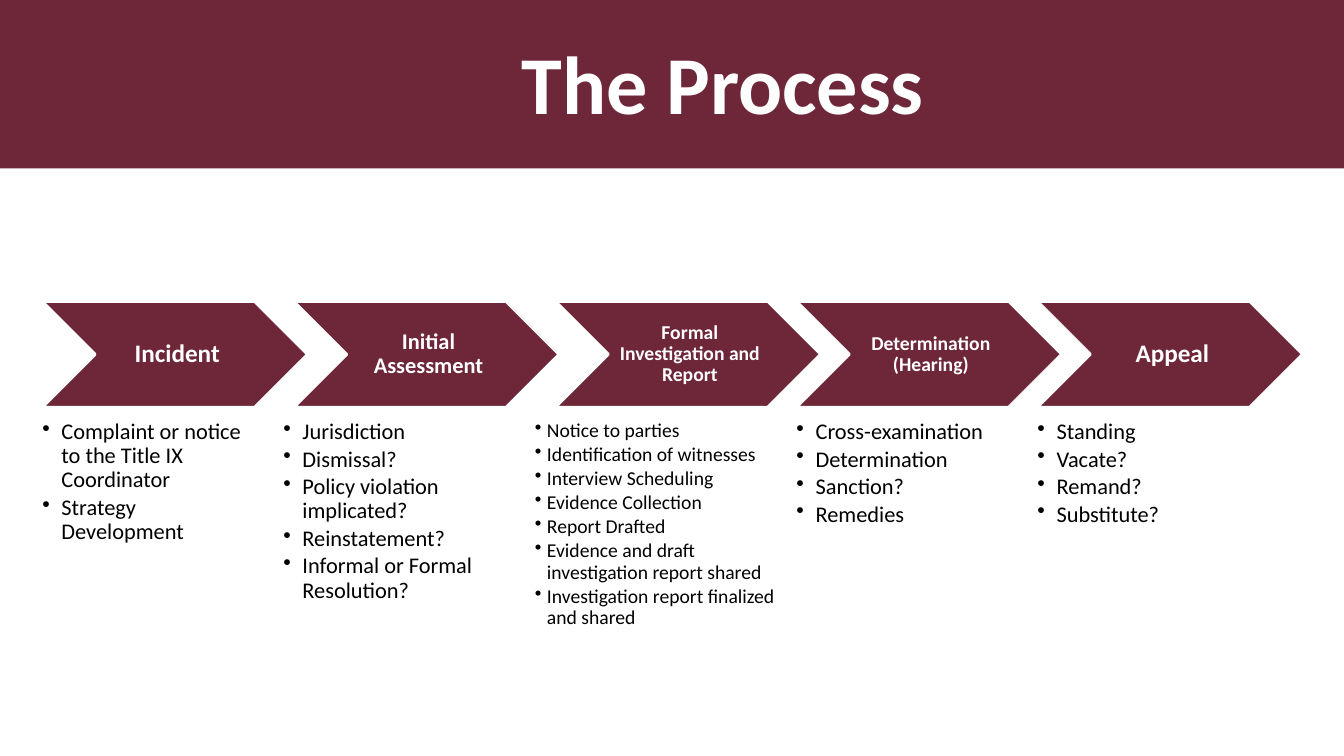
from lxml import etree
from pptx import Presentation
from pptx.dml.color import RGBColor
from pptx.enum.shapes import MSO_SHAPE as Shape
from pptx.enum.text import MSO_ANCHOR as Anchor, PP_ALIGN as Align
from pptx.oxml.ns import qn
from pptx.util import Inches, Pt

COLORS = {"maroon": "6E2639", "white": "FFFFFF", "black": "000000"}
FONT = "Calibri"
BASE_WIDTH = 2.1      # width of a regular column
BASE_STEP = 2.39      # distance between regular columns
CHEVRON_WIDTH, CHEVRON_HEIGHT = 2.63, 1.05
LIST_OFFSET, LIST_HEIGHT = 1.18, 2.14

# heading, heading size, column width, list size, list indent, items
STAGES = [
    ("Incident", 18, 2.1, 16, 0.19,
     ["Complaint or notice to the Title IX Coordinator",
      "Strategy Development"]),
    ("Initial Assessment", 16, 2.31, 16, 0.19,
     ["Jurisdiction", "Dismissal?", "Policy violation implicated?",
      "Reinstatement?", "Informal or Formal Resolution?"]),
    ("Formal Investigation and Report", 14, 2.51, 14, 0.12,
     ["Notice to parties", "Identification of witnesses",
      "Interview Scheduling", "Evidence Collection", "Report Drafted",
      "Evidence and draft investigation report shared",
      "Investigation report finalized and shared"]),
    ("Determination (Hearing)", 14, 2.1, 16, 0.19,
     ["Cross-examination", "Determination", "Sanction?", "Remedies"]),
    ("Appeal", 18, 2.1, 16, 0.19,
     ["Standing", "Vacate?", "Remand?", "Substitute?"]),
]


def rgb(name):
    return RGBColor.from_string(COLORS[name])


def add_maroon_shape(slide, kind, left, top, width, height):
    shape = slide.shapes.add_shape(
        kind, Inches(left), Inches(top), Inches(width), Inches(height))
    shape.shadow.inherit = False
    shape.fill.solid()
    shape.fill.fore_color.rgb = rgb("maroon")
    shape.line.fill.background()
    return shape


def add_text(slide, left, top, width, height, lines, size, color,
             bold=False, align=Align.LEFT, anchor=Anchor.TOP,
             insets=(0, 0, 0, 0)):
    box = slide.shapes.add_textbox(
        Inches(left), Inches(top), Inches(width), Inches(height))
    frame = box.text_frame
    frame.word_wrap = True
    frame.vertical_anchor = anchor
    (frame.margin_left, frame.margin_top,
     frame.margin_right, frame.margin_bottom) = map(Inches, insets)
    frame.text = "\n".join(lines)
    for paragraph in frame.paragraphs:
        paragraph.alignment = align
        paragraph.line_spacing = 0.9
        for run in paragraph.runs:
            run.font.name = FONT
            run.font.size = Pt(size)
            run.font.bold = bold
            run.font.color.rgb = rgb(color)
    return frame


def add_header(slide, left, top, width, height):
    add_maroon_shape(slide, Shape.RECTANGLE, left, top, width, height)
    add_text(slide, left + 1.78, top + 0.25, 10.78, 1.25, ["The Process"],
             58.7, "white", True, Align.CENTER, Anchor.MIDDLE)


def add_chevron(slide, left, top, heading, size):
    chevron = add_maroon_shape(slide, Shape.CHEVRON, left, top,
                               CHEVRON_WIDTH, CHEVRON_HEIGHT)
    chevron.line.color.rgb = rgb("white")
    chevron.line.width = Pt(2)
    # Heading sits between the notch and the point
    notch = CHEVRON_HEIGHT / 2
    inset = 0.03 if size == 18 else 0.02
    add_text(slide, left + notch, top, CHEVRON_WIDTH - 2 * notch,
             CHEVRON_HEIGHT, [heading], size, "white", True,
             Align.CENTER, Anchor.MIDDLE,
             (inset + size / 400, inset, inset, inset))


def add_bullets(slide, left, top, width, items, size, indent):
    frame = add_text(slide, left, top, width, LIST_HEIGHT, items,
                     size, "black")
    for paragraph in frame.paragraphs:
        paragraph.space_after = Pt(round(size * 0.15, 1))
        properties = paragraph._p.get_or_add_pPr()
        properties.set("marL", str(Inches(indent)))
        properties.set("indent", str(-Inches(indent)))
        bullet = etree.SubElement(properties, qn("a:buChar"))
        bullet.set("char", "•")


def add_process(slide, left, top):
    for heading, heading_size, width, size, indent, items in STAGES:
        # Wider lists stay centred under the chevron body
        overhang = (width - BASE_WIDTH) / 2
        add_chevron(slide, left + overhang, top, heading, heading_size)
        add_bullets(slide, left, top + LIST_OFFSET, width, items, size, indent)
        left += BASE_STEP + overhang


def main():
    presentation = Presentation()
    presentation.slide_width = Inches(13.33)
    presentation.slide_height = Inches(7.5)
    slide = presentation.slides.add_slide(presentation.slide_layouts[6])
    add_header(slide, 0, 0, 13.33, 1.67)
    add_process(slide, 0.42, 2.99)
    presentation.save("out.pptx")


if __name__ == "__main__":
    main()
